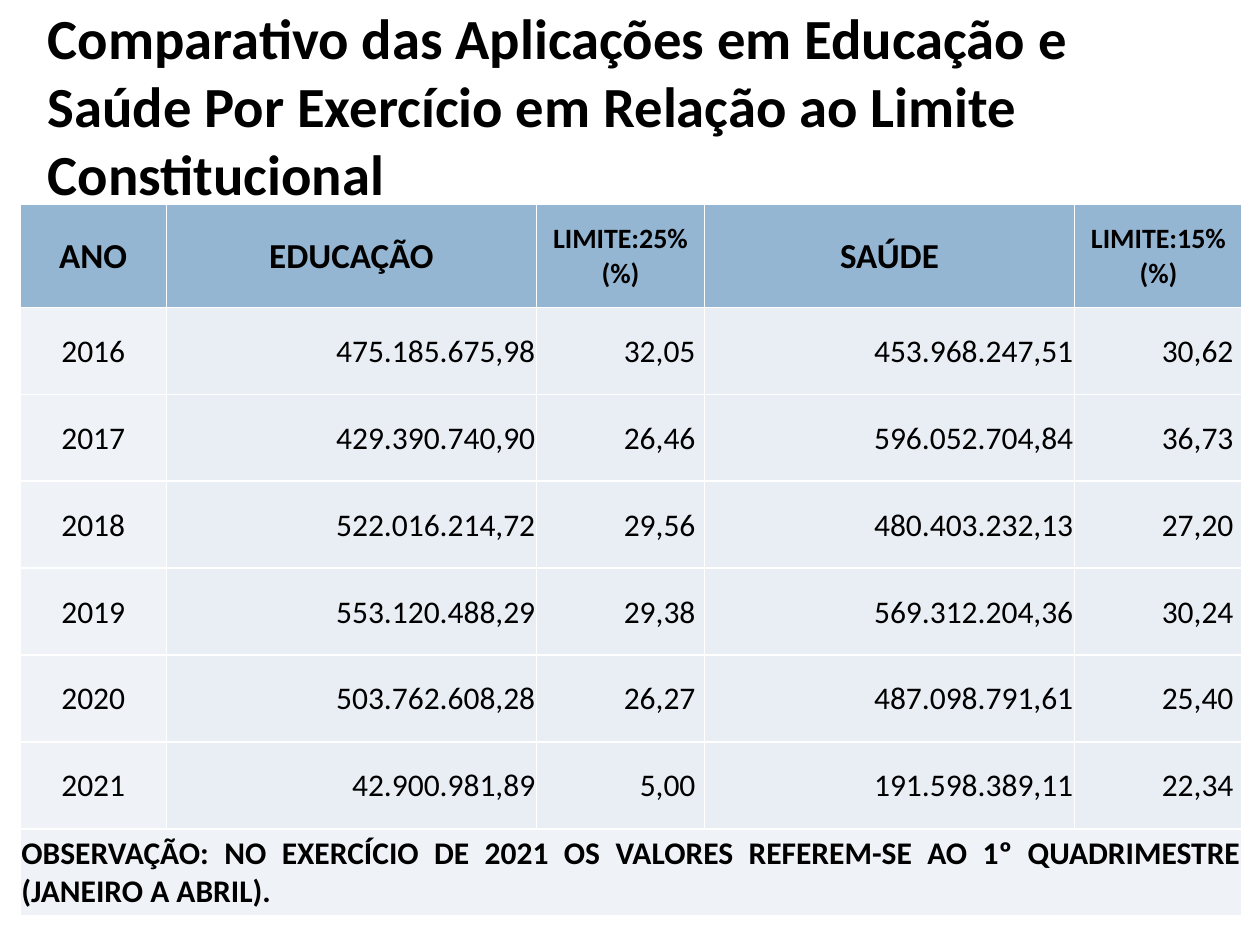
from lxml import etree
from pptx import Presentation
from pptx.dml.color import RGBColor
from pptx.enum.text import MSO_ANCHOR, MSO_AUTO_SIZE, PP_ALIGN
from pptx.oxml.ns import qn
from pptx.util import Inches, Pt

CENTER, RIGHT, LEFT, JUSTIFY = PP_ALIGN.CENTER, PP_ALIGN.RIGHT, PP_ALIGN.LEFT, PP_ALIGN.JUSTIFY
MIDDLE = MSO_ANCHOR.MIDDLE
NO_AUTOFIT = MSO_AUTO_SIZE.NONE

BLACK = RGBColor(0x00, 0x00, 0x00)
HEADER_BLUE = RGBColor(0x94, 0xB6, 0xD2)
PALE_BLUE = RGBColor(0xEF, 0xF3, 0xF7)
VALUE_BLUE = RGBColor(0xE9, 0xED, 0xF4)
BORDER_COLOR = "FFFFFF"

HEADERS = ["ANO", "EDUCAÇÃO", "LIMITE:25% (%)", "SAÚDE", "LIMITE:15% (%)"]
HEADER_SIZES = [20, 20, 16, 20, 16]
ROWS = [
    ["2016", "475.185.675,98", "32,05", "453.968.247,51", "30,62"],
    ["2017", "429.390.740,90", "26,46", "596.052.704,84", "36,73"],
    ["2018", "522.016.214,72", "29,56", "480.403.232,13", "27,20"],
    ["2019", "553.120.488,29", "29,38", "569.312.204,36", "30,24"],
    ["2020", "503.762.608,28", "26,27", "487.098.791,61", "25,40"],
    ["2021", "42.900.981,89", "5,00", "191.598.389,11", "22,34"],
]
NOTE = ("OBSERVAÇÃO: NO EXERCÍCIO DE 2021 OS VALORES REFEREM-SE AO "
        "1º QUADRIMESTRE (JANEIRO A ABRIL).")
COL_WIDTHS = [1.16, 2.94, 1.33, 2.94, 1.33]
ROW_HEIGHTS = [0.82] + [0.69] * 7
PERCENT_COLS = (2, 4)


def format_paragraph(p, size, bold, align):
    p.alignment = align
    p.font.name = "Calibri"
    p.font.size = Pt(size)
    p.font.bold = bold
    p.font.color.rgb = BLACK


def fill_cell(cell, text, size, bold, align, fill, right=0.01):
    cell.text = text
    format_paragraph(cell.text_frame.paragraphs[0], size, bold, align)
    cell.vertical_anchor = MIDDLE
    cell.margin_left = cell.margin_top = Inches(0.01)
    cell.margin_right = Inches(right)
    cell.margin_bottom = 0
    cell.fill.solid()
    cell.fill.fore_color.rgb = fill


prs = Presentation()
prs.slide_width, prs.slide_height = Inches(10), Inches(7.5)
s = prs.slides.add_slide(prs.slide_layouts[5])

# Title
title = s.shapes.title
title.left, title.top = Inches(0.28), Inches(0.21)
title.width, title.height = Inches(9.45), Inches(1.25)
tf = title.text_frame
tf.text = ("Comparativo das Aplicações em Educação e Saúde Por Exercício "
           "em Relação ao Limite Constitucional")
tf.auto_size = NO_AUTOFIT
tf.vertical_anchor = MIDDLE
format_paragraph(tf.paragraphs[0], 32.4, True, LEFT)

# Table grid
table = s.shapes.add_table(len(ROW_HEIGHTS), len(COL_WIDTHS), Inches(0.16), Inches(1.62),
                           Inches(9.69), Inches(5.67)).table
for column, width in zip(table.columns, COL_WIDTHS):
    column.width = Inches(width)
for row, height in zip(table.rows, ROW_HEIGHTS):
    row.height = Inches(height)

# Header row
for c, (text, size) in enumerate(zip(HEADERS, HEADER_SIZES)):
    fill_cell(table.cell(0, c), text, size, True, CENTER, HEADER_BLUE)

# Yearly values
for r, values in enumerate(ROWS, start=1):
    for c, text in enumerate(values):
        fill_cell(table.cell(r, c), text, 18, False,
                  CENTER if c == 0 else RIGHT,
                  PALE_BLUE if c == 0 else VALUE_BLUE,
                  0.07 if c in PERCENT_COLS else 0.01)

# Note across the last row
last = len(ROWS) + 1
table.cell(last, 0).merge(table.cell(last, len(HEADERS) - 1))
fill_cell(table.cell(last, 0), NOTE, 18, True, JUSTIFY, PALE_BLUE)

# White cell borders
for cell in table.iter_cells():
    tcPr = cell._tc.get_or_add_tcPr()
    for i, side in enumerate(("a:lnL", "a:lnR", "a:lnT", "a:lnB")):
        ln = etree.Element(qn(side), w=str(Pt(1)))
        solid = etree.SubElement(ln, qn("a:solidFill"))
        etree.SubElement(solid, qn("a:srgbClr"), val=BORDER_COLOR)
        tcPr.insert(i, ln)

prs.save("out.pptx")
